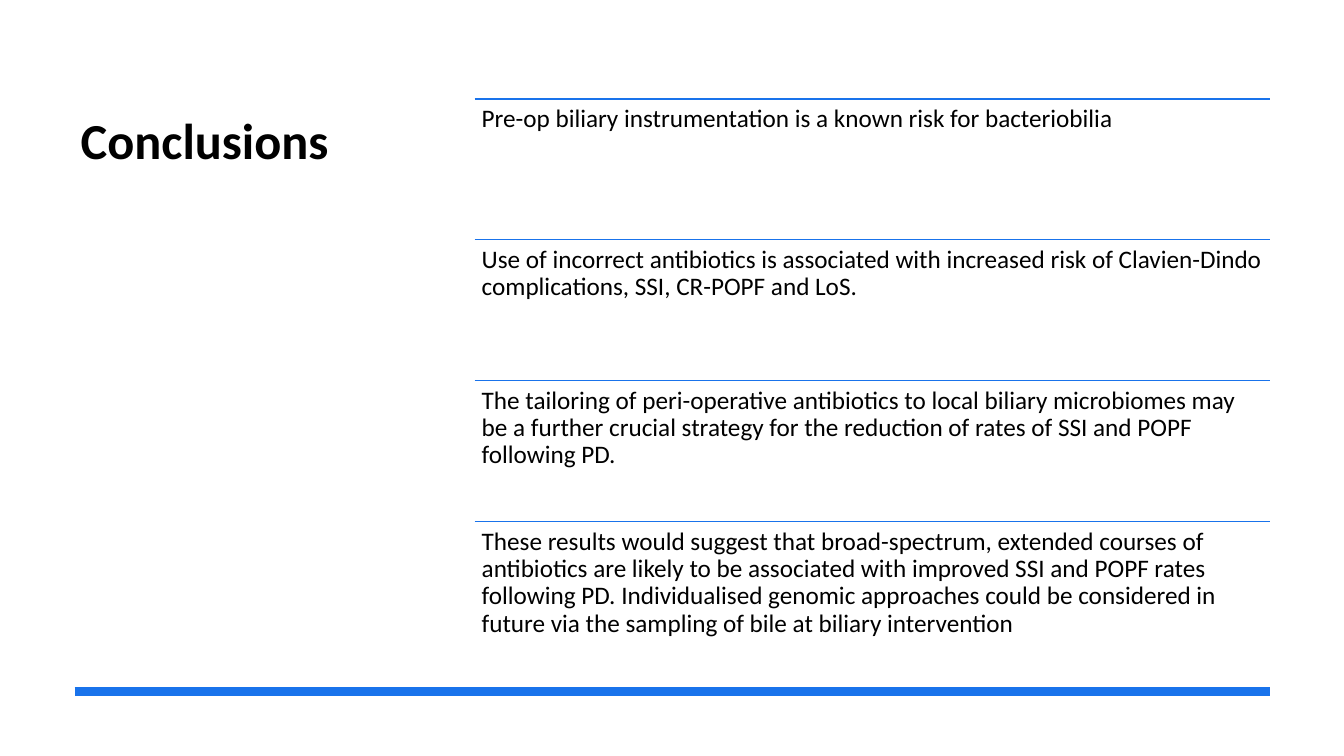
from dataclasses import dataclass

import pptx
import pptx.dml.color
import pptx.enum.shapes
import pptx.enum.text
import pptx.oxml.ns
import pptx.util
from lxml import etree
from pptx.util import Cm


@dataclass(frozen=True)
class Theme:
    font: str = "Calibri"
    ink: str = "000000"
    accent: str = "1973EB"
    title_size: int = 36
    point_size: int = 18
    divider_width: int = 1
    footer_width: int = 6


THEME = Theme()
RIGHT_EDGE = Cm(32)
POINTS_LEFT = Cm(11.96)
POINTS_TOP = Cm(2.49)
POINT_PITCH = Cm(3.55)
POINT_INSET = Cm(0.18)

CONCLUSIONS = [
    "Pre-op biliary instrumentation is a known risk for bacteriobilia",
    "Use of incorrect antibiotics is associated with increased risk of "
    "Clavien-Dindo complications, SSI, CR-POPF and LoS.",
    "The tailoring of peri-operative antibiotics to local biliary microbiomes "
    "may be a further crucial strategy for the reduction of rates of SSI and "
    "POPF following PD.",
    "These results would suggest that broad-spectrum, extended courses of "
    "antibiotics are likely to be associated with improved SSI and POPF rates "
    "following PD. Individualised genomic approaches could be considered in "
    "future via the sampling of bile at biliary intervention",
]


def write(frame, text, size, bold=False):
    frame.word_wrap = True
    frame.auto_size = pptx.enum.text.MSO_AUTO_SIZE.NONE
    frame.vertical_anchor = pptx.enum.text.MSO_ANCHOR.TOP
    paragraph = frame.paragraphs[0]
    paragraph.alignment = pptx.enum.text.PP_ALIGN.LEFT
    run = paragraph.add_run()
    run.text = text
    run.font.name = THEME.font
    run.font.size = pptx.util.Pt(size)
    run.font.bold = bold
    run.font.color.rgb = pptx.dml.color.RGBColor.from_string(THEME.ink)
    return paragraph


def add_heading(slide, text):
    heading = slide.shapes.title
    heading.left, heading.top = Cm(1.78), Cm(2.54)
    heading.width, heading.height = Cm(8.33), Cm(11.56)
    heading.text_frame.margin_top = Cm(0.2)
    write(heading.text_frame, text, THEME.title_size, bold=True)


def add_rule(slide, left, top, width):
    rule = slide.shapes.add_connector(
        pptx.enum.shapes.MSO_CONNECTOR.STRAIGHT, left, top, RIGHT_EDGE, top
    )
    rule.line.color.rgb = pptx.dml.color.RGBColor.from_string(THEME.accent)
    rule.line.width = pptx.util.Pt(width)
    etree.SubElement(rule._element.spPr, pptx.oxml.ns.qn("a:effectLst"))


def add_conclusion(slide, top, text):
    add_rule(slide, POINTS_LEFT, top, THEME.divider_width)
    conclusion = slide.shapes.add_textbox(
        POINTS_LEFT, top, RIGHT_EDGE - POINTS_LEFT, POINT_PITCH
    )
    frame = conclusion.text_frame
    frame.margin_left = frame.margin_right = POINT_INSET
    frame.margin_top = frame.margin_bottom = POINT_INSET
    paragraph = write(frame, text, THEME.point_size)
    paragraph.line_spacing = 0.9


def main():
    deck = pptx.Presentation()
    deck.slide_width, deck.slide_height = Cm(33.87), Cm(19.05)
    slide = deck.slides.add_slide(deck.slide_layouts.get_by_name("Title Only"))
    add_heading(slide, "Conclusions")
    add_rule(slide, Cm(1.88), Cm(17.42), THEME.footer_width)
    for row, text in enumerate(CONCLUSIONS):
        add_conclusion(slide, POINTS_TOP + row * POINT_PITCH, text)
    deck.save("out.pptx")


if __name__ == "__main__":
    main()
